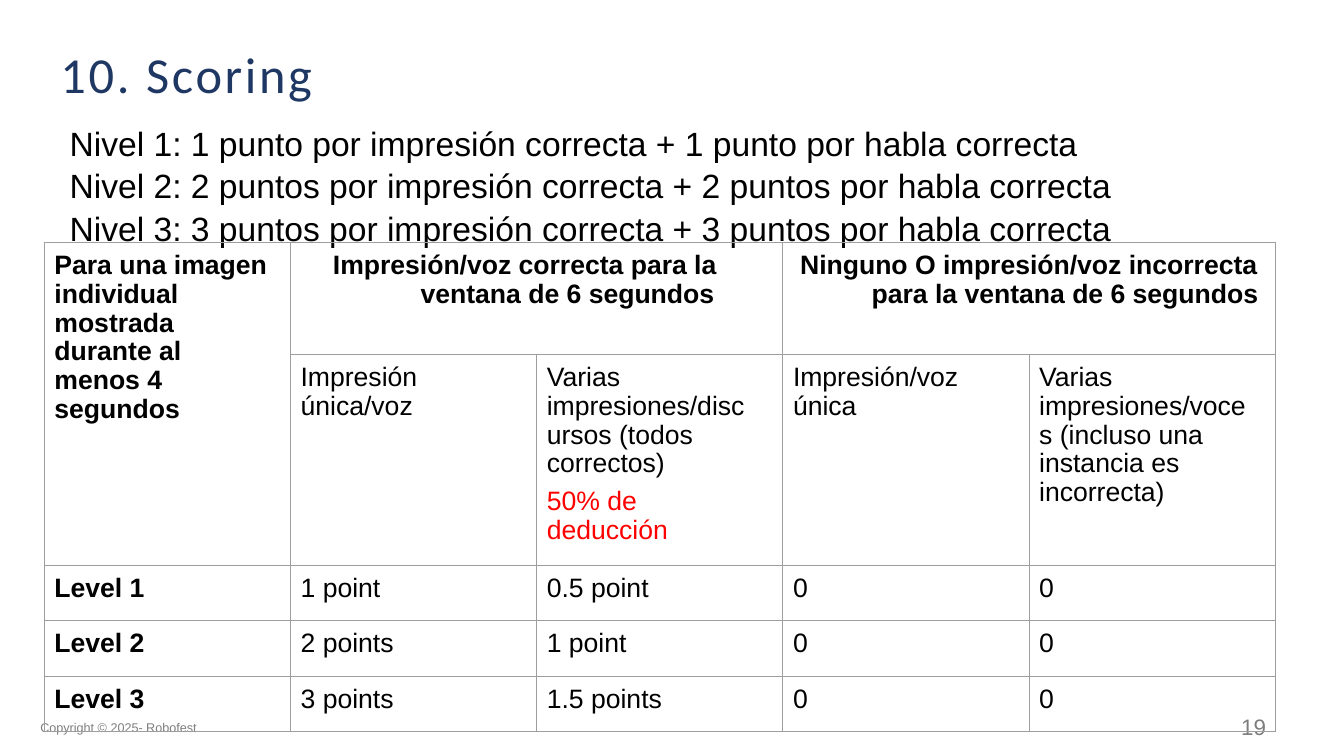
import pptx
import pptx.util
import pptx.dml.color
import pptx.enum.text
import pptx.oxml
from lxml import etree

Inch, Pt = pptx.util.Inches, pptx.util.Pt
WIDE, HIGH = 13.33, 7.5
NS = "http://schemas.openxmlformats.org/drawingml/2006/main"
BLACK, RED, GREY, NAVY, RULE = "000000", "FF0000", "7E7E7E", "1F3863", "9E9E9E"

LEVELS = [
    "Nivel 1: 1 punto por impresión correcta + 1 punto por habla correcta",
    "Nivel 2: 2 puntos por impresión correcta + 2 puntos por habla correcta",
    "Nivel 3: 3 puntos por impresión correcta + 3 puntos por habla correcta",
]
KINDS = [
    ["Impresión única/voz"],
    ["Varias impresiones/discursos (todos correctos)", "50% de deducción"],
    ["Impresión/voz única"],
    ["Varias impresiones/voces (incluso una instancia es incorrecta)"],
]
POINTS = [
    ["Level 1", "1 point", "0.5 point", "0", "0"],
    ["Level 2", "2 points", "1 point", "0", "0"],
    ["Level 3", "3 points", "1.5 points", "0", "0"],
]


def color(code):
    return pptx.dml.color.RGBColor.from_string(code)


def style(para, size, code, font="Arial", bold=False, left=0.01, first=0):
    """Set font and indent, without a bullet."""
    props = para._p.get_or_add_pPr()
    props.set("marL", str(Inch(left)))
    props.set("indent", str(Inch(first)))
    etree.SubElement(props, f"{{{NS}}}buNone")
    para.alignment = pptx.enum.text.PP_ALIGN.LEFT
    para.space_before = Pt(0)
    para.font.name, para.font.size = font, Pt(size)
    para.font.bold = bold
    para.font.color.rgb = color(code)


def write(shape, box, lines, size, code, font="Arial", pitch=1.0):
    shape.left, shape.top, shape.width, shape.height = map(Inch, box)
    frame = shape.text_frame
    frame.word_wrap = True
    frame.auto_size = pptx.enum.text.MSO_AUTO_SIZE.NONE
    frame.vertical_anchor = pptx.enum.text.MSO_ANCHOR.TOP
    frame.margin_left = frame.margin_right = frame.margin_bottom = 0
    frame.margin_top = Inch(0.01)
    frame.text = "\n".join(lines)
    for para in frame.paragraphs:
        style(para, size, code, font)
        para.line_spacing = pitch


def frame_cell(cell):
    """Clear the fill and rule all four sides."""
    cell.fill.background()
    props = cell._tc.get_or_add_tcPr()
    for spot, side in enumerate("LRTB"):
        props.insert(spot, pptx.oxml.parse_xml(
            f'<a:ln{side} xmlns:a="{NS}" w="{Pt(0.75)}"><a:solidFill>'
            f'<a:srgbClr val="{RULE}"/></a:solidFill></a:ln{side}>'))


def fill_cell(cell, lines, bold=False, left=0.1, first=0, right=0.29):
    cell.margin_left = cell.margin_bottom = 0
    cell.margin_top, cell.margin_right = Inch(0.09), Inch(right)
    cell.text_frame.text = "\n".join(lines)
    for spot, para in enumerate(cell.text_frame.paragraphs):
        style(para, 19, RED if spot else BLACK, bold=bold, left=left, first=first)
        para.line_spacing = 0.97
        if spot:
            para.space_before = Pt(6.7)


def score_table(slide, box):
    rows = [1.11, 2.09, 0.55, 0.55, 0.55]
    grid = slide.shapes.add_table(len(rows), 5, *map(Inch, box)).table
    grid.first_row = grid.horz_banding = False
    for row, high in zip(grid.rows, rows):
        row.height = Inch(high)
    for col in grid.columns:
        col.width = Inch(box[2] / 5)
    for cell in grid.iter_cells():
        frame_cell(cell)

    grid.cell(0, 0).merge(grid.cell(1, 0))
    for col in (1, 3):
        grid.cell(0, col).merge(grid.cell(0, col + 1))
    fill_cell(grid.cell(0, 0),
              ["Para una imagen individual mostrada durante al menos 4 segundos"],
              bold=True, right=0.2)
    fill_cell(grid.cell(0, 1),
              ["Impresión/voz correcta para la ventana de 6 segundos"],
              bold=True, left=1.29, first=-0.87)
    fill_cell(grid.cell(0, 3),
              ["Ninguno O impresión/voz incorrecta para la ventana de 6 segundos"],
              bold=True, left=0.88, first=-0.71, right=0.1)
    for col, lines in enumerate(KINDS, 1):
        fill_cell(grid.cell(1, col), lines)
    for row, marks in enumerate(POINTS, 2):
        for col, mark in enumerate(marks):
            fill_cell(grid.cell(row, col), [mark], bold=col == 0)


def heading(slide, box):
    title = slide.shapes.title
    write(title, box, ["10. Scoring"], 36, NAVY, "Calibri")
    for run in title.text_frame.paragraphs[0].runs:
        run._r.get_or_add_rPr().set("spc", "190")


def footer(slide, box):
    """Copyright at the left end, page number at the right."""
    left, top, wide, high = box
    parts = [((left, top + 0.07, 1.8, 0.18), "Copyright © 2025- Robofest", 9),
             ((left + wide - 0.27, top, 0.27, high), "19", 16)]
    for place, text, size in parts:
        note = slide.shapes.add_textbox(*map(Inch, place))
        write(note, place, [text], size, GREY)


def main():
    deck = pptx.Presentation()
    deck.slide_width, deck.slide_height = Inch(WIDE), Inch(HIGH)
    slide = deck.slides.add_slide(deck.slide_layouts[1])
    heading(slide, (0.59, 0.42, 11.81, 0.63))
    footer(slide, (0.39, 7.06, 12.18, 0.29))
    score_table(slide, (0.44, 2.41, 12.21, 4.85))
    write(slide.placeholders[1], (0.68, 1.19, 10.48, 1.23), LEVELS, 24, BLACK,
          pitch=1.05)
    deck.save("out.pptx")


if __name__ == "__main__":
    main()
